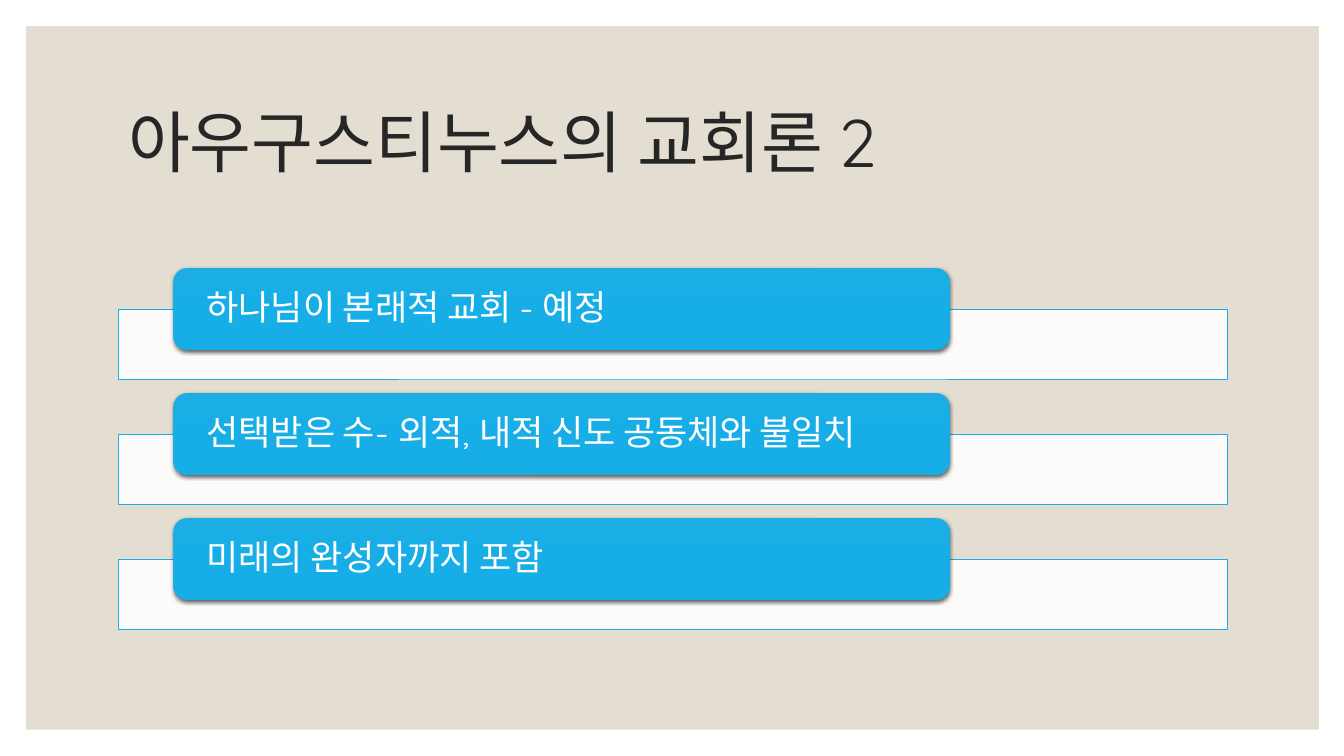
from dataclasses import dataclass

import pptx
import pptx.dml.color
import pptx.enum.shapes
import pptx.enum.text
import pptx.oxml.ns
import pptx.util
from lxml import etree

Inches = pptx.util.Inches
Shape = pptx.enum.shapes.MSO_SHAPE
qn = pptx.oxml.ns.qn


@dataclass(frozen=True)
class Theme:
    font: str = "Quicksand"
    panel: str = "E3DED1"
    white: str = "FFFFFF"
    title: str = "262626"
    accent: str = "1CADE4"
    accent_end: str = "17AEE8"
    shadow: str = "000000"
    title_size: int = 48
    item_size: int = 25


THEME = Theme()
TITLE = "아우구스티누스의 교회론 2"
ITEMS = [
    "하나님이 본래적 교회 - 예정",
    "선택받은 수- 외적, 내적 신도 공동체와 불일치",
    "미래의 완성자까지 포함",
]
ROW_TOP = 2.66
ROW_STEP = 1.24


def rgb(color):
    return pptx.dml.color.RGBColor.from_string(color)


def apply(target, formats):
    for name, value in formats.items():
        setattr(target, name, value)


def place(sp, box):
    apply(sp, dict(zip(("left", "top", "width", "height"), map(Inches, box))))


def write(sp, text, size, color, inset_x, inset_y):
    tf = sp.text_frame
    apply(tf, {
        "word_wrap": True,
        "auto_size": pptx.enum.text.MSO_AUTO_SIZE.NONE,
        "vertical_anchor": pptx.enum.text.MSO_ANCHOR.MIDDLE,
        "margin_left": Inches(inset_x),
        "margin_right": Inches(inset_x),
        "margin_top": Inches(inset_y),
        "margin_bottom": Inches(inset_y),
    })
    p = tf.paragraphs[0]
    apply(p, {"alignment": pptx.enum.text.PP_ALIGN.LEFT, "line_spacing": 0.9})
    r = p.add_run()
    r.text = text
    apply(r.font, {"name": THEME.font, "size": pptx.util.Pt(size)})
    r.font.color.rgb = rgb(color)


def add_box(s, kind, box):
    sp = s.shapes.add_shape(kind, *map(Inches, box))
    sp.shadow.inherit = False
    sp.line.fill.background()
    return sp


def add_panel(s):
    sp = add_box(s, Shape.RECTANGLE, (0.26, 0.26, 12.82, 6.98))
    sp.fill.solid()
    sp.fill.fore_color.rgb = rgb(THEME.panel)


def add_title(s):
    sp = s.shapes.title
    place(sp, (1.17, 0.7, 11, 1.5))
    write(sp, TITLE, THEME.title_size, THEME.title, 0.1, 0.05)


def add_bar(s, top):
    sp = add_box(s, Shape.RECTANGLE, (1.17, top, 11, 0.69))
    sp.fill.solid()
    sp.fill.fore_color.rgb = rgb(THEME.white)
    color = sp.fill._xPr.find(qn("a:solidFill"))[0]
    etree.SubElement(color, qn("a:alpha"), val="90000")
    sp.line.color.rgb = rgb(THEME.accent)
    sp.line.width = pptx.util.Pt(0.5)


def add_shadow(sp):
    effects = sp._element.spPr.find(qn("a:effectLst"))
    shadow = etree.SubElement(
        effects, qn("a:outerShdw"), blurRad=str(pptx.util.Pt(3)),
        dist=str(pptx.util.Pt(1)), dir="5400000", rotWithShape="0")
    color = etree.SubElement(shadow, qn("a:srgbClr"), val=THEME.shadow)
    etree.SubElement(color, qn("a:alpha"), val="63000")


def add_label(s, top, text):
    sp = add_box(s, Shape.ROUNDED_RECTANGLE, (1.72, top, 7.7, 0.81))
    sp.fill.gradient()
    sp.fill.gradient_angle = 270
    stops = ((0, THEME.accent), (0.5, THEME.accent_end))
    for stop, (position, color) in zip(sp.fill.gradient_stops, stops):
        stop.position = position
        stop.color.rgb = rgb(color)
    add_shadow(sp)
    write(sp, text, THEME.item_size, THEME.white, 0.29, 0)


def main():
    prs = pptx.Presentation()
    apply(prs, {"slide_width": Inches(13.33), "slide_height": Inches(7.5)})
    s = prs.slides.add_slide(prs.slide_layouts[5])
    add_panel(s)
    title = s.shapes.title._element
    s.shapes._spTree.append(title)
    add_title(s)
    for i, text in enumerate(ITEMS):
        top = ROW_TOP + i * ROW_STEP
        add_bar(s, top + 0.41)
        add_label(s, top, text)
    prs.save("out.pptx")


if __name__ == "__main__":
    main()
